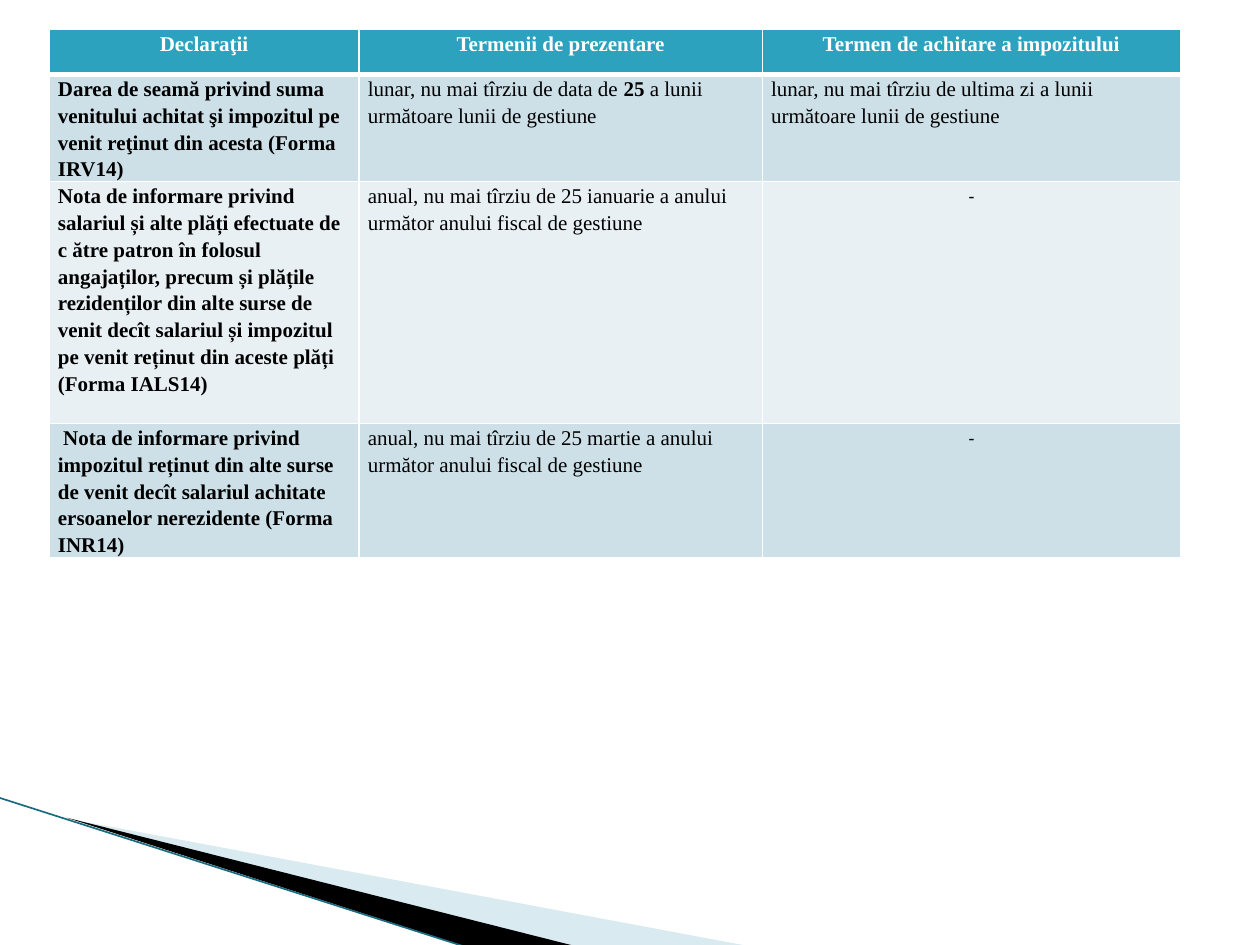
from lxml.etree import SubElement
from pptx import Presentation
from pptx.dml.color import RGBColor
from pptx.enum.text import PP_ALIGN
from pptx.oxml.ns import qn
from pptx.util import Inches, Pt
from pptx.enum.shapes import MSO_CONNECTOR

WHITE = RGBColor(0xFF, 0xFF, 0xFF)
BLACK = RGBColor(0x00, 0x00, 0x00)
TEAL = RGBColor(0x2D, 0xA2, 0xBF)
DARK_TEAL = RGBColor(0x1B, 0x6B, 0x80)
PALE_TEAL = RGBColor(0xA0, 0xCB, 0xDC)
BAND_DARK = RGBColor(0xCD, 0xE0, 0xE8)
BAND_LIGHT = RGBColor(0xE8, 0xF0, 0xF4)

COLUMN_WIDTHS = [2.46, 3.2, 3.32]
ROW_HEIGHTS = [0.36, 0.85, 1.92, 1.06]
HEADERS = ["Declaraţii", "Termenii de prezentare", "Termen de achitare a impozitului"]
DECLARATIONS = [
    [
        "Darea de seamă privind suma venitului achitat şi impozitul pe venit reţinut din acesta (Forma IRV14)",
        ["lunar, nu mai tîrziu de data de ", "25", " a lunii următoare lunii de gestiune"],
        "lunar, nu mai tîrziu de ultima zi a lunii următoare lunii de gestiune",
    ],
    [
        "Nota de informare privind salariul și alte plăți efectuate de c ătre patron în folosul "
        "angajaților, precum și plățile rezidenților din alte surse de venit decît salariul și "
        "impozitul pe venit reținut din aceste plăți (Forma IALS14)",
        "anual, nu mai tîrziu de 25 ianuarie a anului următor anului fiscal de gestiune",
        "-",
    ],
    [
        " Nota de informare privind impozitul reținut din alte surse de venit decît salariul "
        "achitate ersoanelor nerezidente (Forma INR14)",
        "anual, nu mai tîrziu de 25 martie a anului următor anului fiscal de gestiune",
        "-",
    ],
]


class SlideBuilder:
    font_name = "Times New Roman"
    dash_font_name = "Calibri"
    font_size = Pt(12)
    dash_size = Pt(11)
    line_spacing = 1.15

    def __init__(self, slide):
        self.slide = slide

    def add_wedge(self, points, color, opacity=100):
        corners = [(Inches(x), Inches(y)) for x, y in points]
        builder = self.slide.shapes.build_freeform(*corners[0])
        builder.add_line_segments(corners[1:], close=True)
        wedge = builder.convert_to_shape()
        wedge.shadow.inherit = False
        wedge.fill.solid()
        wedge.fill.fore_color.rgb = color
        wedge.line.fill.background()
        if opacity < 100:
            color_element = wedge._element.spPr.find(qn("a:solidFill"))[0]
            SubElement(color_element, qn("a:alpha"), val=str(opacity * 1000))

    def add_line(self, start, end, color, width):
        ends = [Inches(value) for value in (*start, *end)]
        line = self.slide.shapes.add_connector(MSO_CONNECTOR.STRAIGHT, *ends)
        line.line.color.rgb = color
        line.line.width = Pt(width)
        SubElement(line._element.spPr, qn("a:effectLst"))

    def add_borders(self, cell, bottom_width, top_width):
        properties = cell._tc.get_or_add_tcPr()
        for side, width in (("L", 1), ("R", 1), ("T", top_width), ("B", bottom_width)):
            border = SubElement(properties, qn(f"a:ln{side}"), w=str(Pt(width)))
            fill = SubElement(border, qn("a:solidFill"))
            SubElement(fill, qn("a:srgbClr"), val=str(WHITE))

    def fill_cell(self, cell, content, fill, color, bold):
        cell.margin_left = cell.margin_right = Inches(0.07)
        cell.margin_top = cell.margin_bottom = 0
        cell.fill.solid()
        cell.fill.fore_color.rgb = fill
        para = cell.text_frame.paragraphs[0]
        para.line_spacing = self.line_spacing
        is_dash = content == "-"
        if is_dash or fill == TEAL:
            para.alignment = PP_ALIGN.CENTER
        parts = [content] if isinstance(content, str) else content
        for index, part in enumerate(parts):
            span = para.add_run()
            span.text = part
            span.font.name = self.dash_font_name if is_dash else self.font_name
            span.font.size = self.dash_size if is_dash else self.font_size
            span.font.bold = bold or index == 1
            span.font.color.rgb = color

    def add_table(self, left, top, widths, heights, rows):
        frame = self.slide.shapes.add_table(
            len(rows), len(widths), Inches(left), Inches(top),
            Inches(sum(widths)), Inches(sum(heights)))
        table = frame.table
        for column, width in zip(table.columns, widths):
            column.width = Inches(width)
        for row, height in zip(table.rows, heights):
            row.height = Inches(height)
        for row_index, contents in enumerate(rows):
            is_header = row_index == 0
            band = BAND_DARK if row_index % 2 else BAND_LIGHT
            for column_index, content in enumerate(contents):
                cell = table.cell(row_index, column_index)
                self.add_borders(cell, 3 if is_header else 1, 3 if row_index == 1 else 1)
                self.fill_cell(
                    cell, content,
                    fill=TEAL if is_header else band,
                    color=WHITE if is_header else BLACK,
                    bold=is_header or column_index == 0)


def main():
    deck = Presentation()
    deck.slide_width = Inches(10)
    deck.slide_height = Inches(7.5)
    page = SlideBuilder(deck.slides.add_slide(deck.slide_layouts[6]))
    page.add_wedge([(0.55, 6.5), (5.95, 7.51), (4.56, 7.51)], PALE_TEAL, opacity=40)
    page.add_wedge([(0.53, 6.49), (4.57, 7.51), (3.72, 7.52)], BLACK)
    page.add_line((-0.01, 6.33), (3.71, 7.52), DARK_TEAL, 0.95)
    page.add_table(0.39, 0.23, COLUMN_WIDTHS, ROW_HEIGHTS, [HEADERS, *DECLARATIONS])
    deck.save("out.pptx")


if __name__ == "__main__":
    main()
